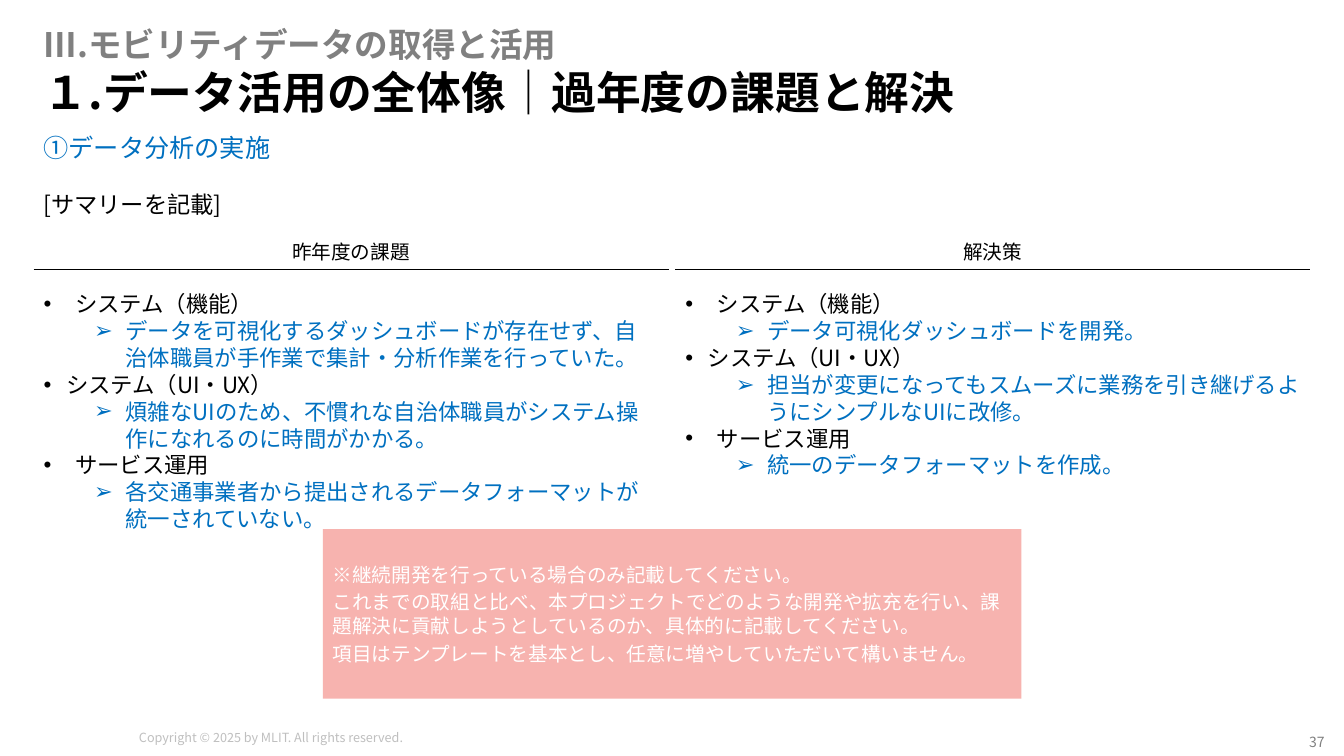
import pptx
import pptx.util
import pptx.dml.color
import pptx.enum.shapes
import pptx.enum.text
import pptx.oxml.ns
import lxml.etree

Pt = pptx.util.Pt
ALIGN = pptx.enum.text.PP_ALIGN
ANCHOR = pptx.enum.text.MSO_ANCHOR
FONT = "Noto Sans CJK JP"
COLORS = {
    "black": "000000",
    "white": "FFFFFF",
    "blue": "0070C0",
    "gray": "808080",
    "light_gray": "BFBFBF",
    "salmon": "F3817B",
}
LEFT = 24
COLUMN_WIDTH = 453.6
COLUMN_STEP = 458.4
BAND_WIDTH = 896
BAND_MARGINS = (7.2, 0, 7.2, 3.6)
BULLETS = {
    "wide": {"level": 0, "mark": "•", "left": 22.5, "hang": 22.5, "color": "black"},
    "narrow": {"level": 0, "mark": "•", "left": 16, "hang": 16, "color": "black"},
    "detail": {"level": 1, "mark": "➢", "left": 58.5, "hang": 22.5, "color": "blue"},
}
TOPICS = [("システム（機能）", "wide"), ("システム（UI・UX）", "narrow"), ("サービス運用", "wide")]
COLUMNS = [
    ("昨年度の課題", [
        "データを可視化するダッシュボードが存在せず、自治体職員が手作業で集計・分析作業を行っていた。",
        "煩雑なUIのため、不慣れな自治体職員がシステム操作になれるのに時間がかかる。",
        "各交通事業者から提出されるデータフォーマットが統一されていない。",
    ]),
    ("解決策", [
        "データ可視化ダッシュボードを開発。",
        "担当が変更になってもスムーズに業務を引き継げるようにシンプルなUIに改修。",
        "統一のデータフォーマットを作成。",
    ]),
]
GUIDANCE = [
    "※継続開発を行っている場合のみ記載してください。",
    "これまでの取組と比べ、本プロジェクトでどのような開発や拡充を行い、課題解決に貢献しようとしているのか、具体的に記載してください。",
    "項目はテンプレートを基本とし、任意に増やしていただいて構いません。",
]


def color(name):
    return pptx.dml.color.RGBColor.from_string(COLORS[name])


def add_element(parent, tag, **attributes):
    return lxml.etree.SubElement(parent, pptx.oxml.ns.qn(tag), attributes)


def apply(target, values):
    for name, value in values.items():
        setattr(target, name, value)


def place(shape, left, top, width, height):
    apply(shape, {"left": Pt(left), "top": Pt(top), "width": Pt(width), "height": Pt(height)})


def prepare_frame(shape, anchor=ANCHOR.TOP, margins=(7.2, 3.6, 7.2, 3.6), wrap=True):
    left, top, right, bottom = margins
    apply(shape.text_frame, {
        "auto_size": pptx.enum.text.MSO_AUTO_SIZE.NONE,
        "word_wrap": wrap,
        "vertical_anchor": anchor,
        "margin_left": Pt(left),
        "margin_top": Pt(top),
        "margin_right": Pt(right),
        "margin_bottom": Pt(bottom),
    })


def write(paragraph, text, size, color_name, bold=False, **paragraph_format):
    apply(paragraph, {"alignment": ALIGN.LEFT, "space_before": Pt(0), **paragraph_format})
    run = paragraph.add_run()
    run.text = text
    apply(run.font, {"name": FONT, "size": Pt(size), "bold": bold})
    run.font.color.rgb = color(color_name)
    add_element(run.font._element, "a:ea", typeface=FONT)


def next_paragraph(shape, index):
    frame = shape.text_frame
    return frame.add_paragraph() if index else frame.paragraphs[0]


def add_label(slide, box, text, size, color_name, bold=False, anchor=ANCHOR.TOP,
              margins=BAND_MARGINS, wrap=True, **paragraph_format):
    shape = slide.shapes.add_textbox(*map(Pt, box))
    prepare_frame(shape, anchor, margins, wrap)
    write(shape.text_frame.paragraphs[0], text, size, color_name, bold, **paragraph_format)


def add_panel(slide, box, fill):
    shape = slide.shapes.add_shape(pptx.enum.shapes.MSO_SHAPE.RECTANGLE, *map(Pt, box))
    shape.shadow.inherit = False
    shape.fill.solid()
    shape.fill.fore_color.rgb = color(fill)
    shape.line.fill.background()
    prepare_frame(shape, ANCHOR.MIDDLE)
    return shape


def add_column_heading(slide, left, text):
    top, height = 167.8, 24.4
    panel = add_panel(slide, (left, top, COLUMN_WIDTH, height), "white")
    write(panel.text_frame.paragraphs[0], text, 14, "black",
          alignment=ALIGN.CENTER, space_after=Pt(3))
    bottom = top + height
    rule = slide.shapes.add_connector(
        pptx.enum.shapes.MSO_CONNECTOR.STRAIGHT,
        Pt(left), Pt(bottom), Pt(left + COLUMN_WIDTH), Pt(bottom))
    rule.line.color.rgb = color("black")
    rule.line.width = Pt(0.5)
    add_element(rule._element.spPr, "a:effectLst")


def fill_list(placeholder, left, details):
    place(placeholder, left, 203.8, COLUMN_WIDTH, 246.2)
    prepare_frame(placeholder)
    entries = []
    for (topic, style), detail in zip(TOPICS, details):
        entries += [(topic, style), (detail, "detail")]
    for index, (text, style) in enumerate(entries):
        bullet = BULLETS[style]
        paragraph = next_paragraph(placeholder, index)
        paragraph.level = bullet["level"]
        properties = paragraph._p.get_or_add_pPr()
        properties.set("marL", str(Pt(bullet["left"])))
        properties.set("indent", str(-Pt(bullet["hang"])))
        add_element(properties, "a:buFont", typeface="Arial")
        add_element(properties, "a:buChar", char=bullet["mark"])
        write(paragraph, text, 16, bullet["color"])


def add_guidance(slide):
    panel = add_panel(slide, (230.6, 378, 499, 121), "salmon")
    fill_color = panel.fill._xPr.find(".//" + pptx.oxml.ns.qn("a:srgbClr"))
    add_element(fill_color, "a:alpha", val="60000")
    for index, text in enumerate(GUIDANCE):
        write(next_paragraph(panel, index), text, 14, "white",
              space_before=Pt(3 if index else 0))


def main():
    presentation = pptx.Presentation()
    apply(presentation, {"slide_width": Pt(960), "slide_height": Pt(540)})
    slide = presentation.slides.add_slide(presentation.slide_layouts[3])

    title = slide.shapes.title
    place(title, LEFT, 51.8, 936, 33.8)
    prepare_frame(title, ANCHOR.MIDDLE)
    write(title.text_frame.paragraphs[0], "１.データ活用の全体像│過年度の課題と解決",
          32, "black", True, line_spacing=0.8)

    add_label(slide, (LEFT, 17.3, BAND_WIDTH, 32.4), "Ⅲ.モビリティデータの取得と活用",
              24, "gray", True, ANCHOR.MIDDLE)
    add_label(slide, (LEFT, 94.3, BAND_WIDTH, 25.2), "①データ分析の実施", 18, "blue")
    add_label(slide, (LEFT, 136.8, BAND_WIDTH, 25.2), "[サマリーを記載]",
              16.6, "black", anchor=ANCHOR.MIDDLE, line_spacing=0.8)

    for index, (heading, details) in enumerate(COLUMNS):
        left = LEFT + index * COLUMN_STEP
        add_column_heading(slide, left, heading)
        fill_list(slide.placeholders[index + 1], left, details)

    add_guidance(slide)
    add_label(slide, (92.2, 517.7, 249.8, 18), "Copyright © 2025 by MLIT. All rights reserved.",
              9, "light_gray", margins=(7.2, 3.6, 7.2, 3.6), wrap=False)
    add_label(slide, (929.5, 521.3, 22.3, 18), "37", 10, "gray",
              margins=(2.9, 2.9, 2.9, 2.9), wrap=False, alignment=ALIGN.CENTER)
    presentation.save("out.pptx")


if __name__ == "__main__":
    main()
